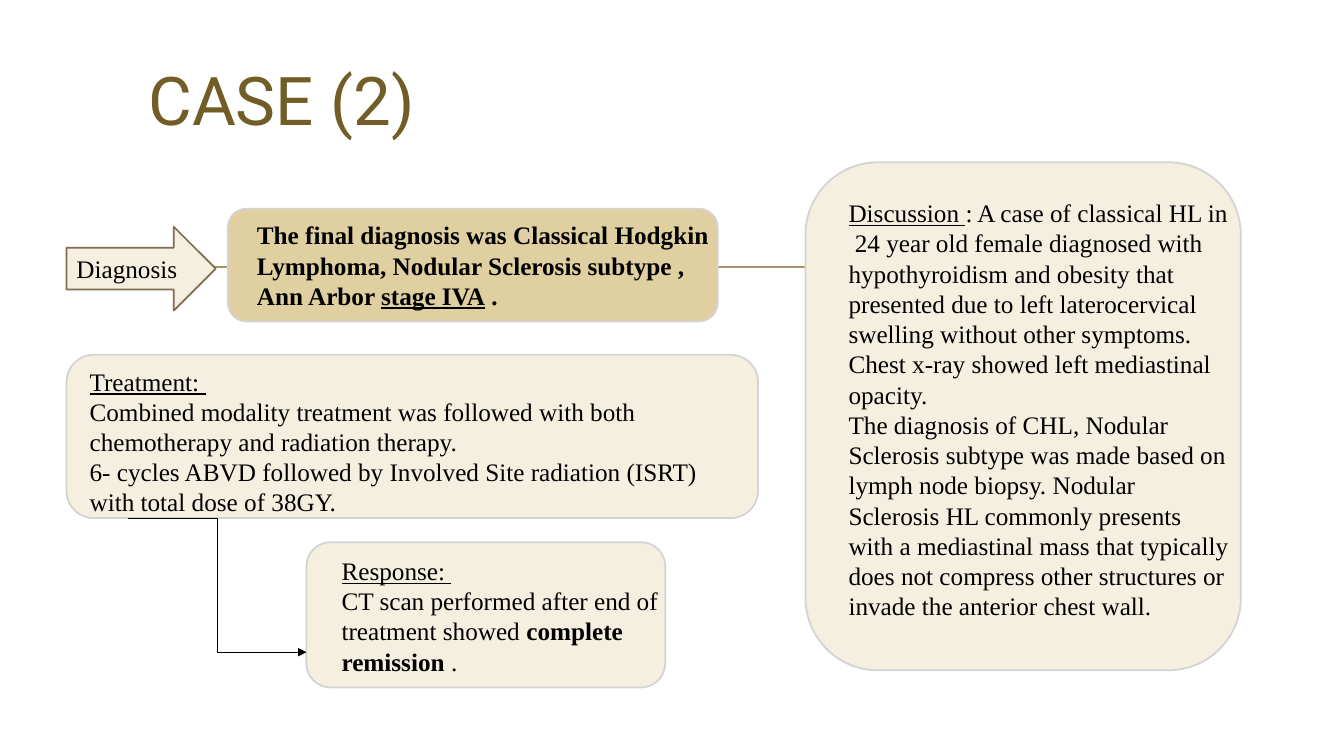
from lxml import etree
from pptx import Presentation
from pptx import util as u
from pptx.dml.color import RGBColor
from pptx.enum import shapes, text
from pptx.oxml import ns

COLORS = {"title": "715D25", "ink": "000000", "sand": "E0CFA1", "cream": "F5EFE0",
          "edge": "D3D3D3", "arrow_edge": "7F6D4F", "rule": "AB946B"}
SERIF = "Times New Roman"
WIDTH, HEIGHT = u.Inches(13.33), u.Inches(7.5)

# Content: paragraphs are lists of (words, style); style is "", "b", "u" or "bu"
TITLE = [[("CASE (2)", "")]]
DIAGNOSIS = [[("The final diagnosis was Classical Hodgkin Lymphoma, Nodular Sclerosis "
               "subtype , Ann Arbor ", "b"), ("stage IVA", "bu"), (" .", "b")]]
TREATMENT = [
    [("Treatment: ", "u")],
    [("Combined modality treatment was followed with both chemotherapy and "
      "radiation therapy.", "")],
    [("6- cycles ABVD followed by Involved Site radiation (ISRT) with total dose "
      "of 38GY.", "")],
]
RESPONSE = [
    [("Response: ", "u")],
    [("CT scan performed after end of treatment showed ", ""),
     ("complete remission ", "b"), (".", "")],
]
DISCUSSION = [
    [("Discussion ", "u"),
     (": A case of classical HL in  24 year old female diagnosed with hypothyroidism "
      "and obesity that presented due to left laterocervical swelling without other "
      "symptoms. Chest x-ray showed left mediastinal opacity.", "")],
    [("The diagnosis of CHL, Nodular Sclerosis subtype was made based on lymph node "
      "biopsy. Nodular Sclerosis HL commonly presents with a mediastinal mass that "
      "typically does not compress other structures or invade the anterior chest "
      "wall.", "")],
]

# Places: left, top, width, height in percent of the slide
TITLE_AREA = (9.45, 7.07, 23.03, 12.13)
ROUND, ARROW = shapes.MSO_SHAPE.ROUNDED_RECTANGLE, shapes.MSO_SHAPE.RIGHT_ARROW
CARDS = [  # shape, shape area, fill, edge, text area, paragraphs
    (ROUND, (16.95, 27.6, 36.45, 14.93), "sand", "edge",
     (18.38, 28.4, 35.18, 13.47), DIAGNOSIS),
    (ARROW, (4.95, 30, 11.1, 11.07), "cream", "arrow_edge",
     (4.95, 32.8, 9.98, 5.33), [[("Diagnosis", "")]]),
    (ROUND, (4.95, 46.93, 51.45, 21.6), "cream", "edge",
     (5.93, 47.73, 49.43, 21.6), TREATMENT),
    (ROUND, (22.8, 71.73, 26.7, 19.2), "cream", "edge",
     (24.68, 72.8, 27.23, 17.47), RESPONSE),
    (ROUND, (59.93, 21.47, 32.4, 67.2), "cream", "edge",
     (62.4, 25.47, 29.93, 66), DISCUSSION),
]
RULE = (11.48, 35.33, 88.58, 35.33)
ELBOW = (9.53, 68.53, 22.8, 86.27)


def color(name):
    return RGBColor.from_string(COLORS[name])


def place(area):
    """Turn percent pairs of x and y into slide lengths."""
    return [int(share / 100 * (HEIGHT if i % 2 else WIDTH)) for i, share in enumerate(area)]


def write(box, paragraphs, font=SERIF, size=18, ink="ink", align=text.PP_ALIGN.LEFT,
          wrap=True, pitch=None):
    frame = box.text_frame
    frame.word_wrap = wrap
    frame.auto_size = text.MSO_AUTO_SIZE.NONE
    frame.vertical_anchor = text.MSO_ANCHOR.TOP
    for i, spans in enumerate(paragraphs):
        para = frame.add_paragraph() if i else frame.paragraphs[0]
        para.alignment = align
        if pitch:
            para.line_spacing = u.Pt(pitch)
        for words, style in spans:
            span = para.add_run()
            span.text = words
            span.font.name, span.font.size = font, u.Pt(size)
            span.font.color.rgb = color(ink)
            span.font.bold, span.font.underline = "b" in style, "u" in style


def connect(page, kind, ends, ink, weight):
    line = page.shapes.add_connector(kind, *place(ends))
    line.line.color.rgb = color(ink)
    line.line.width = u.Pt(weight)
    etree.SubElement(line._element.spPr, ns.qn("a:effectLst"))
    return line


def main():
    deck = Presentation()
    deck.slide_width, deck.slide_height = WIDTH, HEIGHT
    page = deck.slides.add_slide(deck.slide_layouts[5])

    # Title
    title = page.shapes.title
    title.left, title.top, title.width, title.height = place(TITLE_AREA)
    write(title, TITLE, font="Roboto", size=48, ink="title",
          align=text.PP_ALIGN.CENTER, wrap=False)

    # Rule behind the cards
    connect(page, shapes.MSO_CONNECTOR.STRAIGHT, RULE, "rule", 1.25)

    # Cards and their text
    for kind, area, fill, edge, text_area, paragraphs in CARDS:
        card = page.shapes.add_shape(kind, *place(area))
        card.shadow.inherit = False
        card.fill.solid()
        card.fill.fore_color.rgb = color(fill)
        card.line.color.rgb = color(edge)
        card.line.width = u.Pt(1.25)
        write(page.shapes.add_textbox(*place(text_area)), paragraphs, pitch=21.6)

    # Arrow from treatment to response
    elbow = connect(page, shapes.MSO_CONNECTOR.ELBOW, ELBOW, "ink", 0.75)
    etree.SubElement(elbow.line._get_or_add_ln(), ns.qn("a:tailEnd"), type="triangle")

    deck.save("out.pptx")


if __name__ == "__main__":
    main()
